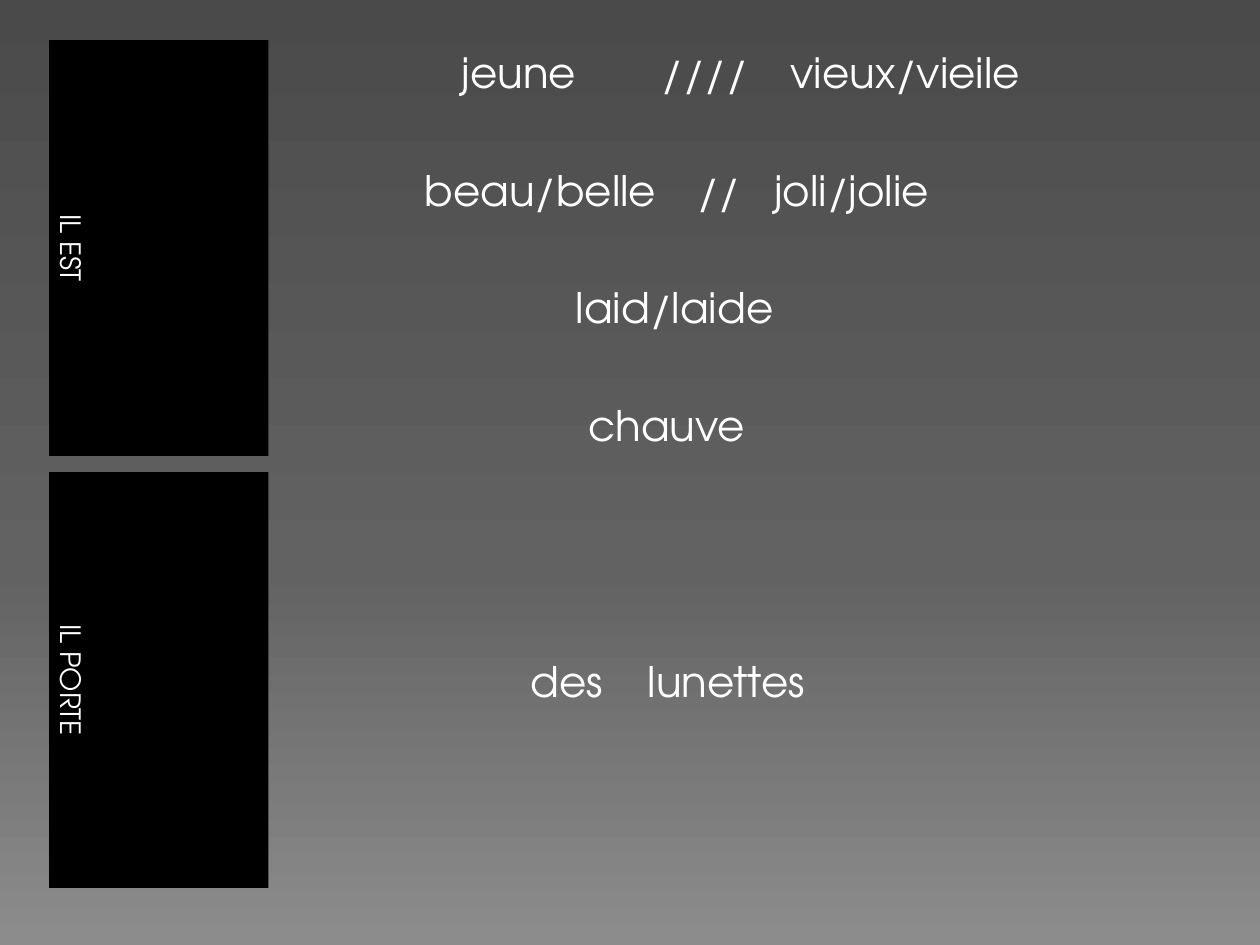
from copy import deepcopy
from pptx import Presentation
from pptx.dml.color import RGBColor
from pptx.enum.shapes import MSO_SHAPE
from pptx.enum.text import MSO_ANCHOR, PP_ALIGN
from pptx.oxml.ns import qn
from pptx.util import Cm, Pt
from lxml.etree import SubElement


def color(value):
    return RGBColor.from_string(value)


def style(paragraph, size):
    paragraph.font.name = "TeX Gyre Adventor"
    paragraph.font.size = Pt(size)
    paragraph.font.color.rgb = color("FFFFFF")


presentation = Presentation()
presentation.slide_width, presentation.slide_height = Cm(25.4), Cm(19.05)
slide = presentation.slides.add_slide(presentation.slide_layouts[6])

background = slide.background.fill
background.gradient()
background.gradient_angle = 270
stop_list = slide.element.find(".//" + qn("a:gsLst"))
stop_list.append(deepcopy(stop_list[-1]))
gradient = [(0, "4A4A4A"), (0.6, "626262"), (1, "8C8C8C")]
for stop, (position, value) in zip(background.gradient_stops, gradient):
    stop.position = position
    stop.color.rgb = color(value)

sections = [
    ("IL EST", 0.13, [
        [("jeune", 3.45), ("////", 7.48), ("vieux/vieile", 10.08)],
        [("beau/belle", 2.7), ("//", 8.2), ("joli/jolie", 9.75)],
        [("laid/laide", 5.75)],
        [("chauve", 6)],
    ]),
    ("IL PORTE", 3.69, [[("des", 4.84), ("lunettes", 7.2)]]),
]
section_height, section_pitch = 8.38, 8.71

for index, (label, text_top, rows) in enumerate(sections):
    top = Cm(0.81 + index * section_pitch)

    panel = slide.shapes.add_shape(MSO_SHAPE.RECTANGLE, Cm(0.99), top, Cm(4.42), Cm(section_height))
    panel.shadow.inherit = False
    panel.fill.solid()
    panel.fill.fore_color.rgb = color("000000")
    panel.line.fill.background()
    panel.text_frame.vertical_anchor = MSO_ANCHOR.BOTTOM
    panel.text_frame._txBody.bodyPr.set("vert", "vert")
    paragraph = panel.text_frame.paragraphs[0]
    paragraph.text = label
    paragraph.alignment = PP_ALIGN.CENTER
    style(paragraph, 16)

    words = slide.shapes.add_textbox(Cm(5.61), top, Cm(19.05), Cm(section_height))
    frame = words.text_frame
    frame.word_wrap = True
    frame.margin_top = Cm(text_top)
    for number, row in enumerate(rows):
        paragraph = frame.add_paragraph() if number else frame.paragraphs[0]
        paragraph.text = "".join("\t" + word for word, _ in row)
        paragraph.space_before = Pt(38.4 if number else 0)
        tabs = SubElement(paragraph._p.get_or_add_pPr(), qn("a:tabLst"))
        for _, position in row:
            SubElement(tabs, qn("a:tab"), pos=str(Cm(position)), algn="l")
        style(paragraph, 24)

presentation.save("out.pptx")
